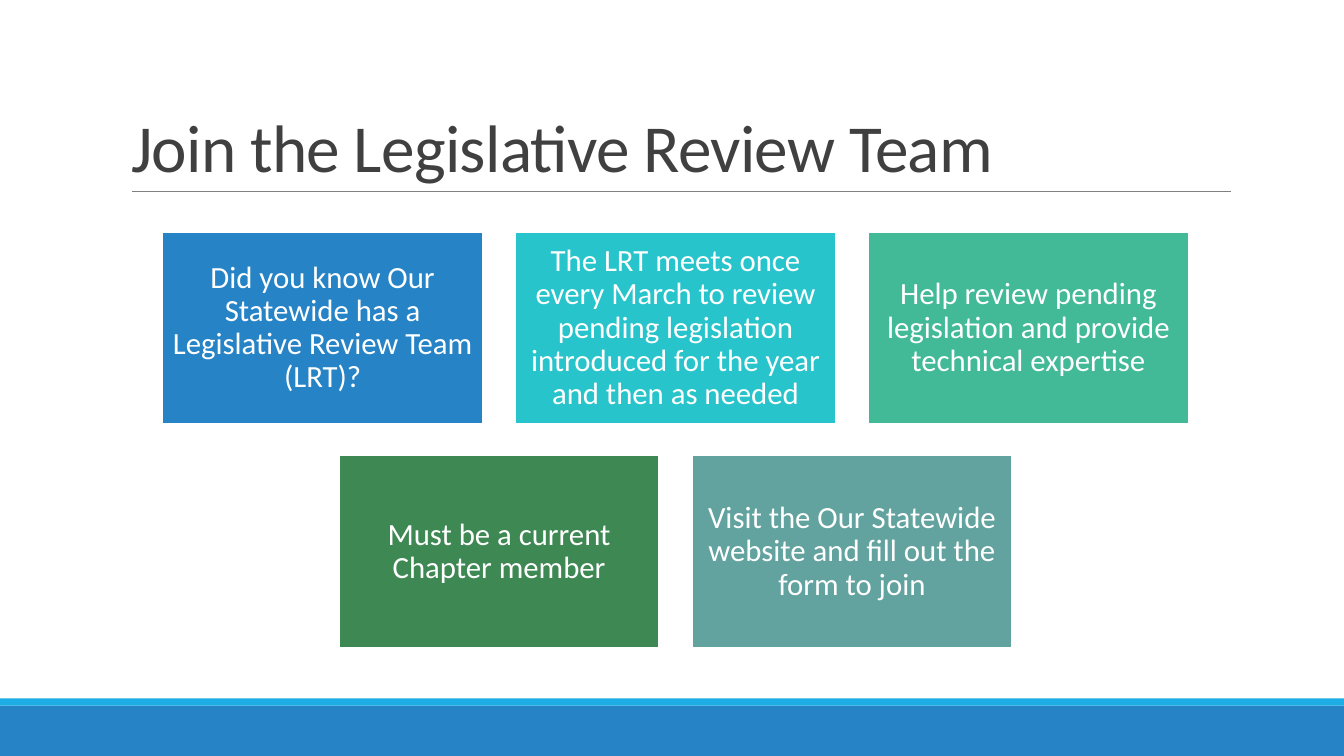
from lxml import etree
from pptx import Presentation
from pptx.dml.color import RGBColor
from pptx.enum.shapes import MSO_CONNECTOR, MSO_SHAPE
from pptx.enum.text import MSO_ANCHOR, MSO_AUTO_SIZE, PP_ALIGN
from pptx.oxml.ns import qn
from pptx.util import Inches, Pt

RECTANGLE = MSO_SHAPE.RECTANGLE
STRAIGHT = MSO_CONNECTOR.STRAIGHT
MIDDLE, BOTTOM = MSO_ANCHOR.MIDDLE, MSO_ANCHOR.BOTTOM
CENTER, LEFT = PP_ALIGN.CENTER, PP_ALIGN.LEFT
NO_AUTO_SIZE = MSO_AUTO_SIZE.NONE

TITLE_ONLY_LAYOUT = 5
SLIDE_WIDTH, SLIDE_HEIGHT = 13.33, 7.5
FONT = "Calibri"

CARD_ROWS = [
    [
        ("Did you know Our Statewide has a Legislative Review Team (LRT)?", "2683C6"),
        ("The LRT meets once every March to review pending legislation "
         "introduced for the year and then as needed", "28C4CC"),
        ("Help review pending legislation and provide technical expertise", "42BA97"),
    ],
    [
        ("Must be a current Chapter member", "3E8853"),
        ("Visit the Our Statewide website and fill out the form to join", "62A39F"),
    ],
]


def color(hex_string):
    return RGBColor.from_string(hex_string)


def add_rectangle(slide, left, top, width, height, fill):
    shape = slide.shapes.add_shape(
        RECTANGLE, Inches(left), Inches(top), Inches(width), Inches(height))
    shape.shadow.inherit = False
    shape.fill.solid()
    shape.fill.fore_color.rgb = color(fill)
    shape.line.fill.background()
    return shape


def write_text(shape, text, size, text_color, alignment, anchor, line_spacing):
    frame = shape.text_frame
    frame.word_wrap = True
    frame.auto_size = NO_AUTO_SIZE
    frame.vertical_anchor = anchor
    paragraph = frame.paragraphs[0]
    paragraph.alignment = alignment
    paragraph.line_spacing = line_spacing
    run = paragraph.add_run()
    run.text = text
    run.font.name = FONT
    run.font.size = Pt(size)
    run.font.color.rgb = color(text_color)
    return run


def add_footer_bands(slide, left, top, width, height):
    stripe = 0.07
    add_rectangle(slide, left, top + stripe, width, height - stripe, "2683C6")
    add_rectangle(slide, left, top, width, stripe, "1CADE4")


def add_title(slide, left, top, width, height):
    # Rule under the title
    rule_left, rule_top = Inches(left + 0.11), Inches(top + height)
    rule = slide.shapes.add_connector(
        STRAIGHT, rule_left, rule_top, rule_left + Inches(10.9), rule_top)
    rule.line.color.rgb = color("808080")
    rule.line.width = Pt(0.5)
    etree.SubElement(rule._element.spPr, qn("a:effectLst"))

    # Title text
    title = slide.shapes.title
    title.left, title.top = Inches(left), Inches(top)
    title.width, title.height = Inches(width), Inches(height)
    run = write_text(title, "Join the Legislative Review Team", 48, "404040",
                     LEFT, BOTTOM, 0.85)
    run.font._element.set("spc", "-50")


def add_card(slide, left, top, width, height, text, fill):
    card = add_rectangle(slide, left, top, width, height, fill)
    card.line.color.rgb = color("FFFFFF")
    card.line.width = Pt(1.25)
    frame = card.text_frame
    frame.margin_left = frame.margin_right = Inches(0.09)
    frame.margin_top = frame.margin_bottom = Inches(0.09)
    write_text(card, text, 22, "FFFFFF", CENTER, MIDDLE, 0.9)


def add_card_grid(slide, left, top, width):
    card_width, card_height = 3.18, 1.91
    column_step, row_step = 3.5, 2.22
    for row_index, cards in enumerate(CARD_ROWS):
        # Each row is centred in the grid
        row_width = (len(cards) - 1) * column_step + card_width
        row_left = left + (width - row_width) / 2
        for column_index, (text, fill) in enumerate(cards):
            add_card(slide, row_left + column_index * column_step,
                     top + row_index * row_step,
                     card_width, card_height, text, fill)


def main():
    presentation = Presentation()
    presentation.slide_width = Inches(SLIDE_WIDTH)
    presentation.slide_height = Inches(SLIDE_HEIGHT)
    slide = presentation.slides.add_slide(
        presentation.slide_layouts[TITLE_ONLY_LAYOUT])
    slide.background.fill.solid()
    slide.background.fill.fore_color.rgb = color("FFFFFF")

    add_footer_bands(slide, 0, 6.93, SLIDE_WIDTH, 0.57)
    add_title(slide, 1.2, 0.31, 11, 1.59)
    add_card_grid(slide, 1.61, 2.3, 10.18)

    presentation.save("out.pptx")


if __name__ == "__main__":
    main()
